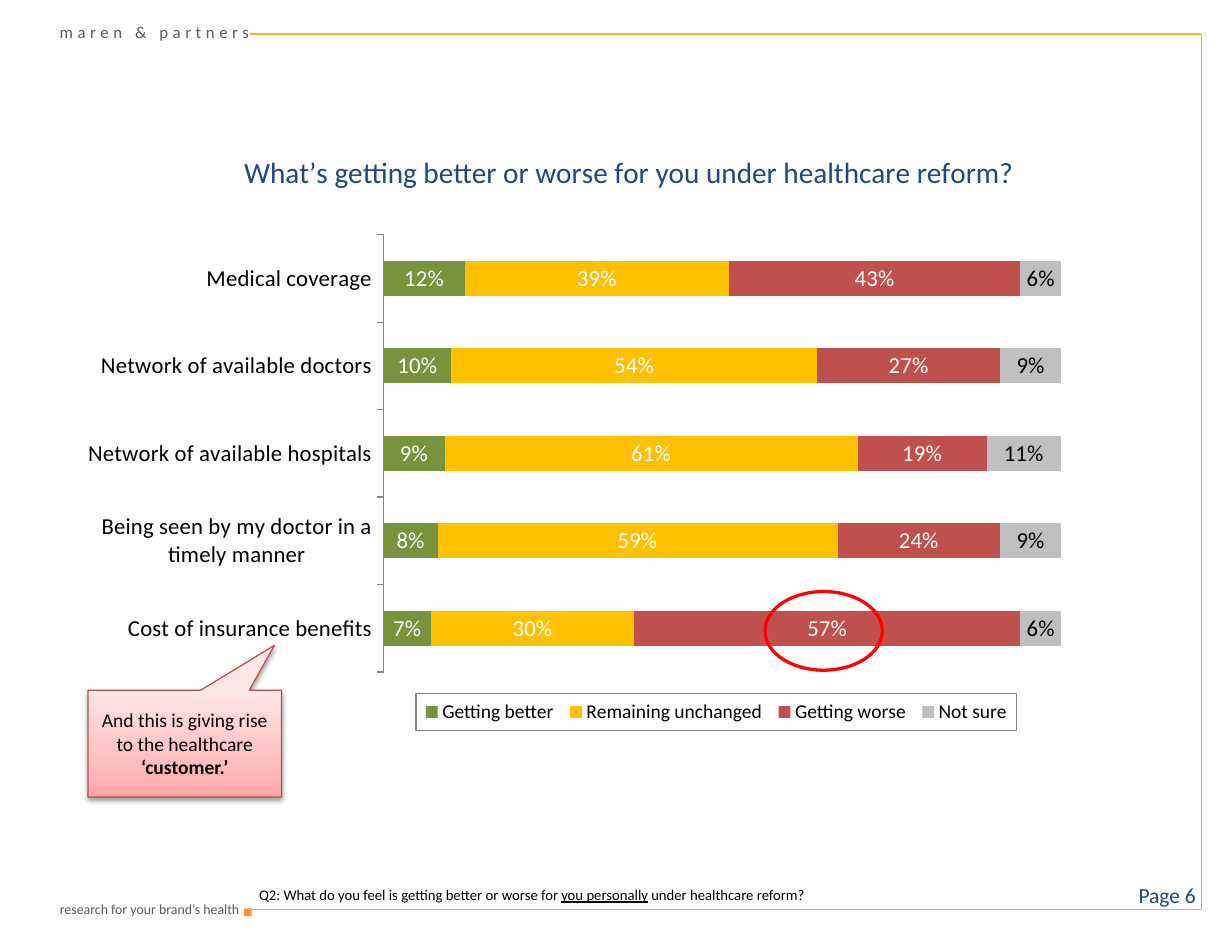
from pptx import Presentation
from pptx import util as u
from pptx.chart.data import CategoryChartData
from pptx.dml.color import RGBColor
from pptx.enum import chart as charts, shapes, text
from pptx.oxml import parse_xml
from pptx.oxml.ns import nsdecls, qn

AMBER = RGBColor(0xFF, 0xAC, 0x33)
ORANGE = RGBColor(0xF7, 0x96, 0x46)
GRAPHITE = RGBColor(0x59, 0x59, 0x59)
AXIS_GRAY = RGBColor(0x86, 0x86, 0x86)
NAVY = RGBColor(0x1F, 0x49, 0x7D)
BLACK = RGBColor(0, 0, 0)
WHITE = RGBColor(0xFF, 0xFF, 0xFF)
RED = RGBColor(0xFF, 0, 0)
BRICK = RGBColor(0xBF, 0x4C, 0x48)
FONT = "Calibri"
CENTER, RIGHT = text.PP_ALIGN.CENTER, text.PP_ALIGN.RIGHT

CATEGORIES = ["Medical coverage", "Network of available doctors",
              "Network of available hospitals",
              "Being seen by my doctor in a timely manner",
              "Cost of insurance benefits"]
SERIES = [
    ("Getting better", [0.12, 0.10, 0.09, 0.08, 0.07], RGBColor(0x77, 0x93, 0x3C), WHITE),
    ("Remaining unchanged", [0.39, 0.54, 0.61, 0.59, 0.30], RGBColor(0xFF, 0xC0, 0x00), WHITE),
    ("Getting worse", [0.43, 0.27, 0.19, 0.24, 0.57], RGBColor(0xC0, 0x50, 0x4D), WHITE),
    ("Not sure", [0.06, 0.09, 0.11, 0.09, 0.06], RGBColor(0xBF, 0xBF, 0xBF), BLACK),
]


def inches(*lengths):
    """Convert numbers to a list of lengths."""
    return [u.Inches(length) for length in lengths]


def style_font(font, size, color):
    """Set the face, size and colour of a font."""
    font.name, font.size, font.color.rgb = FONT, u.Pt(size), color


def fill_para(para, spans, size, color, align=None):
    """Write the spans in one paragraph and return its runs."""
    para.alignment = align
    runs = []
    for span in spans:
        run = para.add_run()
        run.text = span
        runs.append(run)
    style_font(para.font, size, color)
    return runs


def add_label(page, box, spans, size, color, align=None, middle=False):
    """Add a text box and return its runs."""
    frame = page.shapes.add_textbox(*inches(*box)).text_frame
    frame.word_wrap = True
    if middle:
        frame.vertical_anchor = text.MSO_ANCHOR.MIDDLE
    return fill_para(frame.paragraphs[0], spans, size, color, align)


def add_frame(page, left, top, right, bottom):
    """Draw the three-sided border with the firm's name and motto."""
    corners = [(left, top), (right, top), (right, bottom), (left, bottom)]
    for start, end in zip(corners, corners[1:]):
        line = page.shapes.add_connector(shapes.MSO_CONNECTOR.STRAIGHT,
                                         *inches(*start, *end))
        line.line.color.rgb = AMBER
        line.line.width = u.Pt(0.75)
        line._element.spPr.append(parse_xml(f"<a:effectLst {nsdecls('a')}/>"))
    add_label(page, (left - 0.16, bottom - 0.2, 0.3, 0.41), ["▪"], 18.8, ORANGE)
    add_label(page, (left - 1.99, bottom - 0.13, 2, 0.24),
              ["research for your brand’s health"], 8.5, GRAPHITE, RIGHT)
    name, = add_label(page, (left - 1.72, top - 0.15, 2, 0.27),
                      ["maren & partners"], 10.3, GRAPHITE)
    name._r.get_or_add_rPr().set("spc", "280")


def place_part(part, index, inner=False, **fractions):
    """Give a chart part a manual layout in fractions of the chart."""
    for old in part.findall(qn("c:layout")):
        part.remove(old)
    target = '<c:layoutTarget val="inner"/>' if inner else ""
    modes = "".join(f'<c:{key}Mode val="edge"/>' for key in "xy")
    values = "".join(f'<c:{key} val="{value}"/>' for key, value in fractions.items())
    part.insert(index, parse_xml(
        f"<c:layout {nsdecls('c')}><c:manualLayout>{target}{modes}{values}"
        "</c:manualLayout></c:layout>"))


def add_reform_chart(page, box):
    """Add the stacked bar chart of answers."""
    data = CategoryChartData(number_format="0%")
    data.categories = CATEGORIES
    for name, values, _, _ in SERIES:
        data.add_series(name, values)
    chart = page.shapes.add_chart(charts.XL_CHART_TYPE.BAR_STACKED_100,
                                  *inches(*box), data).chart
    style_font(chart.font, 18, BLACK)

    title = chart.chart_title.text_frame.paragraphs[0]
    run, = fill_para(title, ["What’s getting better or worse for you under healthcare reform?"],
                     18, NAVY)
    run.font.bold = title.font.bold = False
    title_part, = chart.element.xpath("c:chart/c:title")
    place_part(title_part, 1, x=0.15, y=0)
    title_part.find(qn("c:overlay")).set("val", "1")

    plot = chart.plots[0]
    plot.gap_width, plot.overlap, plot.vary_by_categories = 150, 100, False
    for series, (_, _, color, label_color) in zip(plot.series, SERIES):
        series.format.fill.solid()
        series.format.fill.fore_color.rgb = color
        labels = series.data_labels
        labels.show_value = True
        labels.number_format, labels.number_format_is_linked = "0%", False
        style_font(labels.font, 14, label_color)
    plot_part, = chart.element.xpath("c:chart/c:plotArea")
    place_part(plot_part, 0, inner=True, x=0.297, y=0.145, w=0.688, h=0.719)

    axis = chart.category_axis
    axis.reverse_order = True
    axis.major_tick_mark = charts.XL_TICK_MARK.OUTSIDE
    axis.format.line.color.rgb = AXIS_GRAY
    style_font(axis.tick_labels.font, 14, BLACK)
    chart.value_axis.has_major_gridlines = False
    chart.value_axis.visible = False

    chart.has_legend = True
    chart.legend.position = charts.XL_LEGEND_POSITION.BOTTOM
    chart.legend.include_in_layout = False
    style_font(chart.legend.font, 12, BLACK)
    legend_part, = chart.element.xpath("c:chart/c:legend")
    place_part(legend_part, 1, x=0.33, y=0.9, w=0.61, h=0.06)
    legend_part.find(qn("c:txPr")).addprevious(parse_xml(
        f'<c:spPr {nsdecls("c", "a")}><a:ln w="9525"><a:solidFill>'
        f'<a:srgbClr val="{AXIS_GRAY}"/></a:solidFill></a:ln></c:spPr>'))


def add_highlight(page, box):
    """Ring the largest share of worse answers."""
    ring = page.shapes.add_shape(shapes.MSO_SHAPE.OVAL, *inches(*box))
    ring.shadow.inherit = False
    ring.fill.background()
    ring.line.color.rgb = RED
    ring.line.width = u.Pt(2)


def add_callout(page, box):
    """Add the shaded callout that points at the last category."""
    callout = page.shapes.add_shape(shapes.MSO_SHAPE.RECTANGULAR_CALLOUT, *inches(*box))
    callout.adjustments[0], callout.adjustments[1] = 0.463, -0.92
    callout.line.color.rgb = BRICK
    callout.line.width = u.Pt(0.75)
    stops = "".join(f'<a:gs pos="{share * 1000}"><a:srgbClr val="{color}"/></a:gs>'
                    for share, color in [(0, "FFA6A5"), (35, "FFC0BF"), (100, "FFE7E7")])
    properties = callout._element.spPr
    properties.find(qn("a:prstGeom")).addnext(parse_xml(
        f'<a:gradFill {nsdecls("a")} rotWithShape="1"><a:gsLst>{stops}</a:gsLst>'
        '<a:lin ang="16200000" scaled="0"/></a:gradFill>'))
    properties.append(parse_xml(
        f'<a:effectLst {nsdecls("a")}><a:outerShdw blurRad="40000" dist="20000" '
        'dir="5400000" rotWithShape="0"><a:srgbClr val="000000"><a:alpha val="38000"/>'
        '</a:srgbClr></a:outerShdw></a:effectLst>'))
    frame = callout.text_frame
    frame.word_wrap = True
    frame.vertical_anchor = text.MSO_ANCHOR.MIDDLE
    _, customer = fill_para(
        frame.paragraphs[0],
        ["And this is giving rise to the healthcare ", "‘customer.’"], 12, BLACK, CENTER)
    customer.font.bold = True


def add_footer(page, left, top):
    """Add the survey question and the page number."""
    _, personally, _ = add_label(
        page, (left, top, 7.86, 0.26),
        ["Q2: What do you feel is getting better or worse for ", "you personally",
         " under healthcare reform?"], 9, BLACK)
    personally.font.underline = True
    add_label(page, (left + 5.73, top - 0.09, 2.45, 0.43), ["Page 6"], 13.2, NAVY,
              RIGHT, middle=True)


def main():
    """Build the slide and save the deck."""
    deck = Presentation()
    deck.slide_width, deck.slide_height = inches(10.5, 8)
    page = deck.slides.add_slide(deck.slide_layouts[6])
    add_frame(page, 2.13, 0.29, 10.24, 7.75)
    add_reform_chart(page, (0.75, 1.25, 8.42, 5.18))
    add_footer(page, 2.11, 7.5)
    add_highlight(page, (6.52, 5.04, 1, 0.67))
    add_callout(page, (0.75, 5.88, 1.65, 0.91))
    deck.save("out.pptx")


if __name__ == "__main__":
    main()
